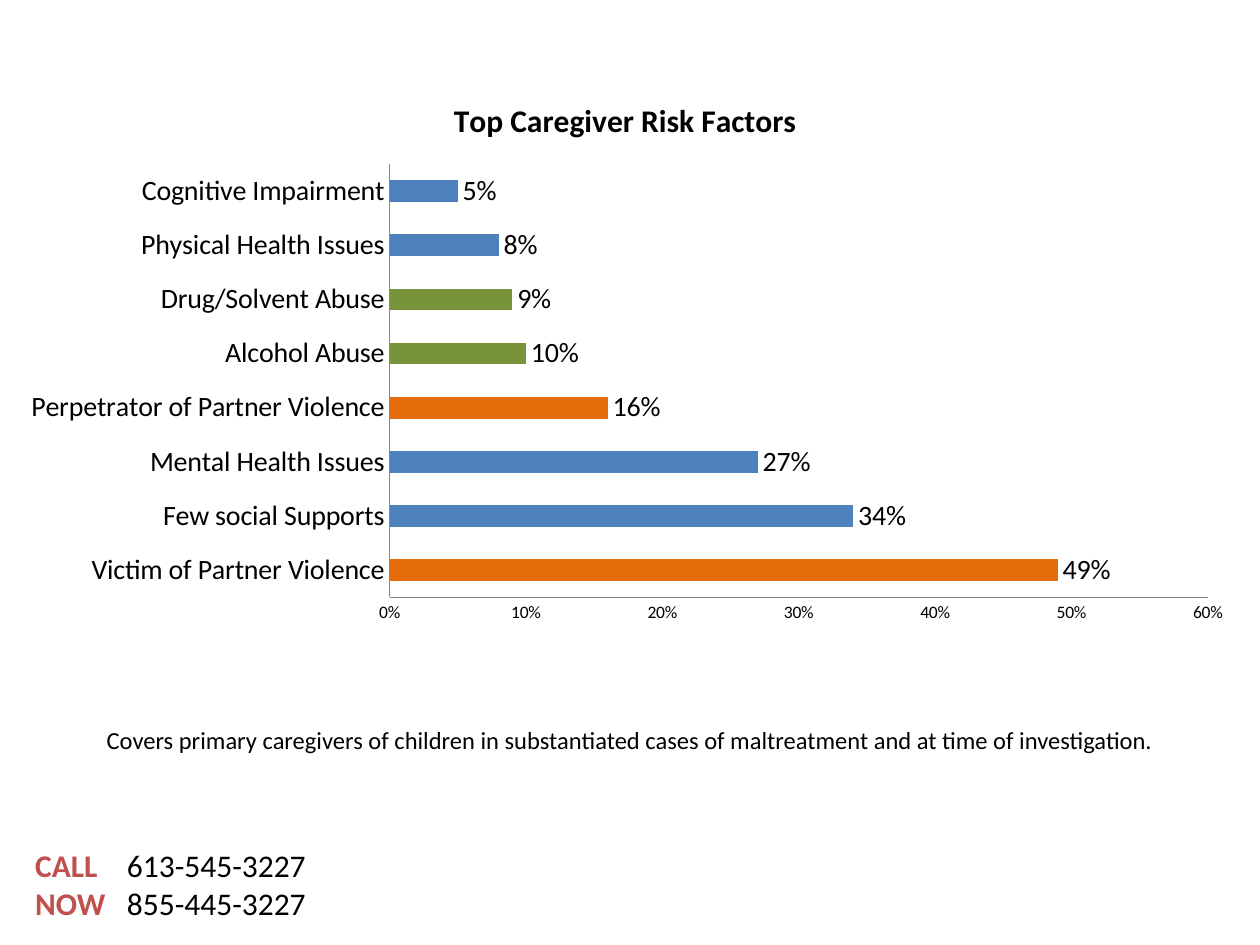
from dataclasses import dataclass

from lxml.etree import SubElement
from pptx import Presentation
from pptx.chart.data import CategoryChartData
from pptx.dml.color import RGBColor
from pptx.enum.chart import XL_CHART_TYPE, XL_LABEL_POSITION, XL_TICK_MARK
from pptx.enum.text import MSO_AUTO_SIZE, PP_ALIGN
from pptx.oxml.ns import qn
from pptx.util import Pt


@dataclass(frozen=True)
class Theme:
    """Hold the colours and type sizes of the slide."""
    font: str = "Calibri"
    ink: str = "000000"
    call: str = "C0504D"
    axis: str = "868686"
    general: str = "4F81BD"
    violence: str = "E46C0A"
    substance: str = "77933C"
    heading: int = 18
    label: int = 16
    note: int = 14
    scale: int = 10


THEME = Theme()
RISK_FACTORS = [
    ("Victim of Partner Violence", 0.49, THEME.violence),
    ("Few social Supports", 0.34, THEME.general),
    ("Mental Health Issues", 0.27, THEME.general),
    ("Perpetrator of Partner Violence", 0.16, THEME.violence),
    ("Alcohol Abuse", 0.10, THEME.substance),
    ("Drug/Solvent Abuse", 0.09, THEME.substance),
    ("Physical Health Issues", 0.08, THEME.general),
    ("Cognitive Impairment", 0.05, THEME.general),
]


def style_font(font, size, color=THEME.ink, bold=False):
    """Set the typeface, size, colour and weight of a font."""
    font.name = THEME.font
    font.size = Pt(size)
    font.bold = bold
    font.color.rgb = RGBColor.from_string(color)


def add_text(page, text, left, top, width, height, size=THEME.heading,
             color=THEME.ink, bold=False, align=PP_ALIGN.LEFT):
    """Add a text box with one paragraph for each line of text."""
    box = page.shapes.add_textbox(Pt(left), Pt(top), Pt(width), Pt(height))
    frame = box.text_frame
    frame.word_wrap = True
    frame.auto_size = MSO_AUTO_SIZE.SHAPE_TO_FIT_TEXT
    frame.text = text
    for para in frame.paragraphs:
        para.alignment = align
        for span in para.runs:
            style_font(span.font, size, color, bold)


def set_plot_area(chart, **fractions):
    """Fix the inner plot area as fractions of the chart."""
    plot_area = chart.plots[0]._element.getparent()
    layout = plot_area.find(qn("c:layout"))
    if layout is None:
        layout = SubElement(plot_area, qn("c:layout"))
        plot_area.insert(0, layout)
    manual = SubElement(layout, qn("c:manualLayout"))
    settings = {"layoutTarget": "inner", "xMode": "edge", "yMode": "edge", **fractions}
    for name, value in settings.items():
        SubElement(manual, qn(f"c:{name}")).set("val", str(value))


def style_axis(axis, size):
    """Give an axis a thin line, no ticks and no gridlines."""
    axis.has_major_gridlines = False
    axis.major_tick_mark = XL_TICK_MARK.NONE
    axis.minor_tick_mark = XL_TICK_MARK.NONE
    axis.format.line.color.rgb = RGBColor.from_string(THEME.axis)
    axis.format.line.width = Pt(0.75)
    style_font(axis.tick_labels.font, size)


def add_risk_chart(page, left, top, width, height):
    """Add the bar chart of caregiver risk factors."""
    data = CategoryChartData(number_format="0%")
    data.categories = [name for name, _, _ in RISK_FACTORS]
    data.add_series("Series 1", [share for _, share, _ in RISK_FACTORS])
    chart = page.shapes.add_chart(XL_CHART_TYPE.BAR_CLUSTERED, Pt(left), Pt(top),
                                  Pt(width), Pt(height), data).chart
    style_font(chart.font, THEME.scale)
    chart.has_legend = False
    chart.has_title = True
    chart.chart_title.include_in_layout = False
    title = chart.chart_title.text_frame
    title.text = "Top Caregiver Risk Factors"
    style_font(title.paragraphs[0].runs[0].font, THEME.heading, bold=True)
    set_plot_area(chart, x=0.31, y=0.16, w=0.66, h=0.78)

    style_axis(chart.category_axis, THEME.label)
    style_axis(chart.value_axis, THEME.scale)
    chart.value_axis.minimum_scale = 0
    chart.value_axis.maximum_scale = 0.6
    chart.value_axis.major_unit = 0.1
    chart.value_axis.tick_labels.number_format = "0%"
    chart.value_axis.tick_labels.number_format_is_linked = False

    plot = chart.plots[0]
    plot.vary_by_categories = False
    plot.gap_width = 150
    series = plot.series[0]
    series.format.fill.solid()
    series.format.fill.fore_color.rgb = RGBColor.from_string(THEME.general)
    for index, (_, _, color) in enumerate(RISK_FACTORS):
        if color != THEME.general:
            fill = series.points[index].format.fill
            fill.solid()
            fill.fore_color.rgb = RGBColor.from_string(color)
    labels = series.data_labels
    labels.show_value = True
    labels.number_format = "0%"
    labels.number_format_is_linked = False
    labels.position = XL_LABEL_POSITION.OUTSIDE_END
    style_font(labels.font, THEME.label)


def add_call_panel(page, left, top):
    """Add the call to action beside its telephone numbers."""
    add_text(page, "CALL\nNOW", left, top, 68, 51, color=THEME.call, bold=True)
    add_text(page, "613-545-3227\n855-445-3227", left + 52.5, top, 119, 51)


def main():
    """Build the slide and save the deck."""
    deck = Presentation()
    deck.slide_width, deck.slide_height = Pt(720), Pt(540)
    page = deck.slides.add_slide(deck.slide_layouts[6])
    add_call_panel(page, 13, 480)
    add_risk_chart(page, 3, 43, 708.5, 317.5)
    add_text(page, "Covers primary caregivers of children in substantiated cases of "
             "maltreatment and at time of investigation.", 0, 410.5, 720, 24.5,
             size=THEME.note, align=PP_ALIGN.CENTER)
    deck.save("out.pptx")


if __name__ == "__main__":
    main()
